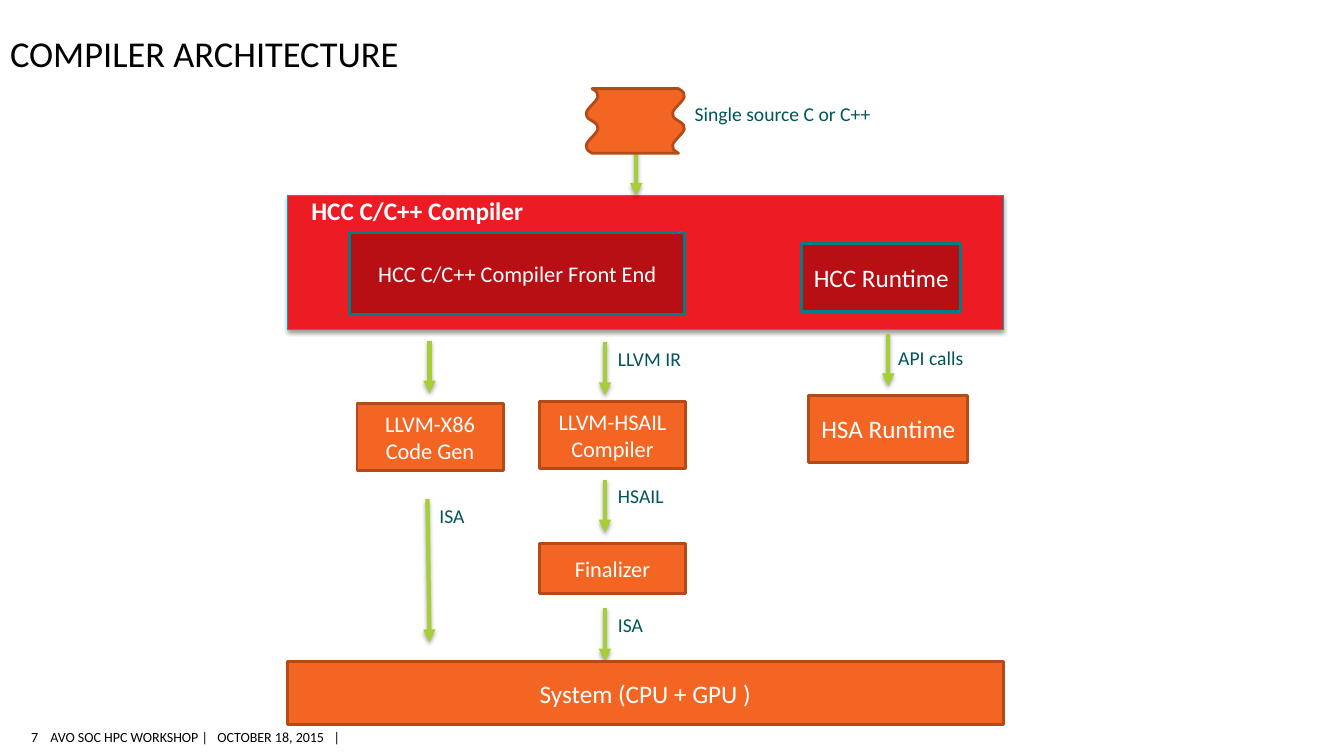
import pptx
import pptx.util
import pptx.dml.color
import pptx.enum.shapes
import pptx.enum.text
import pptx.oxml
import pptx.oxml.ns

# Content: lengths in px, 100 px to the inch
SCALE = 9144
COLORS = {
    "black": "000000", "white": "FFFFFF", "label": "00555A", "arrow": "A6CE39",
    "red": "ED1C24", "cyan": "00A6B1", "dark": "B80F15", "teal": "007E86",
    "orange": "F26522", "rust": "B34B19",
}
KINDS = {  # fill, line, line width in pt
    "panel": ("red", "cyan", 0.75),
    "part": ("dark", "teal", 2),
    "step": ("orange", "rust", 2),
}
PANEL = (285, 194, 710, 133)
WAVE = (598, 71, 64, 98)
BOXES = [  # kind, text, size, left, top, width, height
    ("part", "HCC C/C++ Compiler Front End", 16, 347, 231, 332, 81),
    ("part", "HCC Runtime", 18, 795, 242, 158, 67),
    ("step", "HSA Runtime", 18, 802, 392, 158, 67),
    ("step", "LLVM-X86 Code Gen", 16, 354, 400, 145, 67),
    ("step", "LLVM-HSAIL Compiler", 16, 535, 398, 145, 67),
    ("step", "Finalizer", 16, 535, 539, 145, 50),
    ("step", "System (CPU + GPU )", 18, 285, 656, 710, 63),
]
ARROWS = [  # from x, y, to x, y
    (631, 142, 631, 194),
    (881, 331, 881, 383),
    (600, 339, 600, 392),
    (600, 476, 600, 528),
    (600, 603, 600, 656),
    (426, 338, 426, 390),
    (424, 495, 426, 637),
]
LABELS = [  # text, left, top
    ("Single source C or C++", 679, 96),
    ("API calls", 881, 338),
    ("LLVM IR", 603, 339),
    ("HSAIL", 603, 475),
    ("ISA", 603, 603),
    ("ISA", 426, 495),
]
TITLE = "COMPILER ARCHITECTURE"
HEAD = "HCC C/C++ Compiler"
FOOT = "AVO SOC HPC WORKSHOP |   OCTOBER 18, 2015   |"
PAGE = "7"

SHAPE = pptx.enum.shapes.MSO_SHAPE
ALIGN = pptx.enum.text.PP_ALIGN
ANCHOR = pptx.enum.text.MSO_ANCHOR
Pt = pptx.util.Pt


def px(*nums):
    return [round(n * SCALE) for n in nums]


def color(name):
    return pptx.dml.color.RGBColor.from_string(COLORS[name])


def style(item, **values):
    for name, value in values.items():
        setattr(item, name, value)


def write(shape, text, size, tint, align=ALIGN.LEFT, bold=False, after=0, **frame):
    body = shape.text_frame
    style(body, **{"word_wrap": True, **frame})
    para = body.paragraphs[0]
    para.text = text
    style(para, alignment=align, space_after=Pt(after))
    style(para.runs[0].font, name="Calibri", size=Pt(size), bold=bold)
    para.runs[0].font.color.rgb = color(tint)


def label(spot, text, size, tint, **values):
    write(slide.shapes.add_textbox(*px(*spot)), text, size, tint, **values)


def block(form, kind, spot):
    shape = slide.shapes.add_shape(form, *px(*spot))
    fill, edge, width = KINDS[kind]
    shape.fill.solid()
    shape.fill.fore_color.rgb = color(fill)
    shape.line.color.rgb = color(edge)
    shape.line.width = Pt(width)
    shape.shadow.inherit = False
    return shape


def shade(shape, alpha, drop):
    props = shape._element.spPr
    for old in props.findall(pptx.oxml.ns.qn("a:effectLst")):
        props.remove(old)
    props.append(pptx.oxml.parse_xml(
        f'<a:effectLst {pptx.oxml.ns.nsdecls("a")}>'
        f'<a:outerShdw blurRad="{Pt(3.1)}" dist="{Pt(drop)}" dir="5400000" rotWithShape="0">'
        f'<a:srgbClr val="{COLORS["black"]}"><a:alpha val="{alpha * 1000}"/></a:srgbClr>'
        '</a:outerShdw></a:effectLst>'))


deck = pptx.Presentation()
deck.slide_width, deck.slide_height = px(1333, 750)
slide = deck.slides.add_slide(deck.slide_layouts[6])

# Title and footer
tight = dict(margin_left=0, margin_right=0)
label((10, 0, 1150, 74), TITLE, 26, "black", vertical_anchor=ANCHOR.BOTTOM,
      margin_bottom=0, **tight)
small = dict(vertical_anchor=ANCHOR.MIDDLE, word_wrap=False, **tight)
label((50, 718, 296, 26), FOOT, 10, "black", **small)
label((22, 718, 16, 26), PAGE, 10, "black", align=ALIGN.RIGHT, **small)

# Compiler panel
shade(block(SHAPE.RECTANGLE, "panel", PANEL), 38, 1.6)
label((299, 189, 273, 40), HEAD, 18, "white", bold=True, after=6)

# Arrows
for spot in ARROWS:
    arrow = slide.shapes.add_connector(
        pptx.enum.shapes.MSO_CONNECTOR.STRAIGHT, *px(*spot))
    arrow.line.color.rgb = color("arrow")
    arrow.line.width = Pt(3)
    arrow.line._get_or_add_ln().append(pptx.oxml.parse_xml(
        f'<a:tailEnd {pptx.oxml.ns.nsdecls("a")} type="triangle"/>'))
    shade(arrow, 35, 1.8)

# Boxes and source sheet
for kind, text, size, *spot in BOXES:
    write(block(SHAPE.RECTANGLE, kind, spot), text, size, "white",
          align=ALIGN.CENTER, vertical_anchor=ANCHOR.MIDDLE)
block(SHAPE.DOUBLE_WAVE, "step", WAVE).rotation = 90

# Arrow labels
for text, left, top in LABELS:
    label((left, top, 195, 34), text, 14, "label", after=6)

deck.save("out.pptx")
